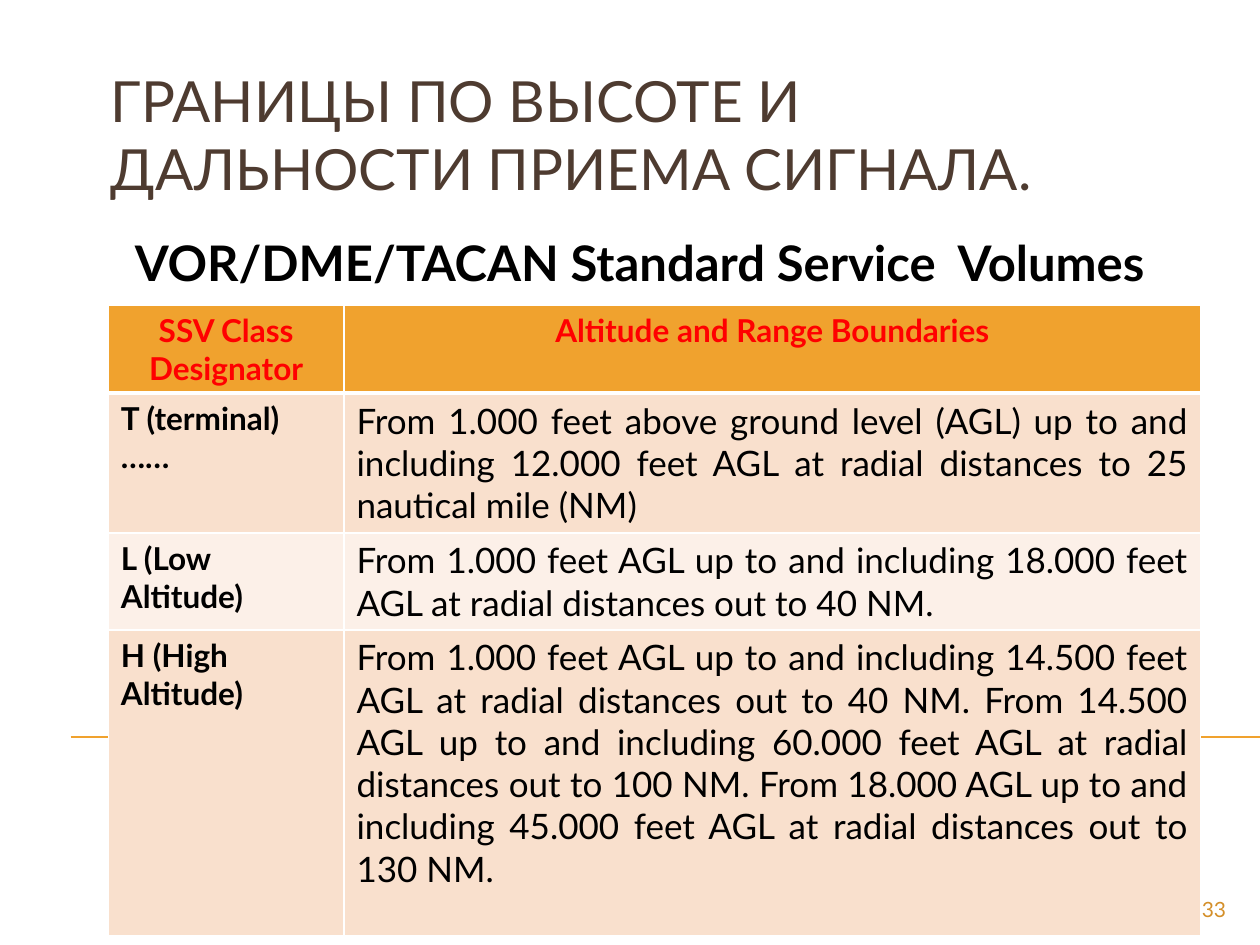
from dataclasses import dataclass

from lxml import etree
from pptx import Presentation
from pptx.dml.color import RGBColor
from pptx.enum.shapes import MSO_CONNECTOR
from pptx.enum.text import MSO_ANCHOR, MSO_AUTO_SIZE, PP_ALIGN
from pptx.oxml.ns import qn
from pptx.util import Inches, Pt

STRAIGHT = MSO_CONNECTOR.STRAIGHT
TOP, MIDDLE = MSO_ANCHOR.TOP, MSO_ANCHOR.MIDDLE
LEFT, CENTER, RIGHT, JUSTIFY = (
    PP_ALIGN.LEFT, PP_ALIGN.CENTER, PP_ALIGN.RIGHT, PP_ALIGN.JUSTIFY)
NO_AUTOFIT = MSO_AUTO_SIZE.NONE


@dataclass(frozen=True)
class Theme:
    font: str = "Lato"
    title: str = "4E3B30"
    text: str = "000000"
    header_text: str = "FF0000"
    number: str = "D48F29"
    accent: str = "F0A22E"
    bands: tuple = ("F9E0CD", "FCF0E8")
    border: str = "FFFFFF"
    title_size: float = 32.4
    heading_size: int = 28
    body_size: int = 20
    label_size: int = 18
    number_size: int = 12


THEME = Theme()
HEADER = ("SSV Class Designator", "Altitude and Range Boundaries")
VOLUMES = (
    ("T (terminal) ……",
     "From 1.000 feet above ground level (AGL) up to and including "
     "12.000 feet AGL at radial distances to 25 nautical mile (NM)"),
    ("L (Low Altitude)",
     "From 1.000 feet AGL up to and including 18.000 feet AGL at radial "
     "distances out to 40 NM."),
    ("H (High Altitude)",
     "From 1.000 feet AGL up to and including 14.500 feet AGL at radial "
     "distances out to 40 NM. From 14.500 AGL up to and including 60.000 "
     "feet AGL at radial distances out to 100 NM. From 18.000 AGL up to and "
     "including 45.000 feet AGL at radial distances out to 130 NM."),
)
COLUMN_WIDTHS = (1.87, 6.8)
ROW_HEIGHTS = (0.69, 1.11, 0.77, 2.43)


def rgb(value):
    return RGBColor.from_string(value)


def write(tf, text, size, color, align=LEFT, bold=False):
    tf.text = text
    p = tf.paragraphs[0]
    p.alignment = align
    font = p.runs[0].font
    font.name, font.size, font.bold = THEME.font, Pt(size), bold
    font.color.rgb = rgb(color)


def add_rule(s, left, right, y):
    line = s.shapes.add_connector(
        STRAIGHT, Inches(left), Inches(y), Inches(right), Inches(y))
    line.line.color.rgb = rgb(THEME.accent)
    line.line.width = Pt(0.75)
    etree.SubElement(line._element.spPr, qn("a:effectLst"))


def place_title(s, box, text):
    title = s.shapes.title
    title.left, title.top, title.width, title.height = map(Inches, box)
    tf = title.text_frame
    tf.word_wrap, tf.auto_size = True, NO_AUTOFIT
    tf.vertical_anchor = TOP
    write(tf, text, THEME.title_size, THEME.title)


def add_text(s, box, text, size, color, align, bold=False, anchor=TOP):
    tf = s.shapes.add_textbox(*map(Inches, box)).text_frame
    tf.word_wrap = True
    tf.vertical_anchor = anchor
    write(tf, text, size, color, align, bold)


def set_borders(cell, top, bottom):
    """Draw all four cell borders; top and bottom are widths in points."""
    tc_pr = cell._tc.get_or_add_tcPr()
    widths = {"a:lnL": 1, "a:lnR": 1, "a:lnT": top, "a:lnB": bottom}
    for i, (tag, width) in enumerate(widths.items()):
        ln = etree.Element(qn(tag), w=str(Pt(width)))
        fill = etree.SubElement(ln, qn("a:solidFill"))
        etree.SubElement(fill, qn("a:srgbClr"), val=THEME.border)
        tc_pr.insert(i, ln)


def add_volume_table(s, left, top):
    rows = (HEADER, *VOLUMES)
    table = s.shapes.add_table(
        len(rows), len(HEADER), Inches(left), Inches(top),
        Inches(sum(COLUMN_WIDTHS)), Inches(sum(ROW_HEIGHTS))).table
    for column, width in zip(table.columns, COLUMN_WIDTHS):
        column.width = Inches(width)
    for r, (row, height) in enumerate(zip(rows, ROW_HEIGHTS)):
        table.rows[r].height = Inches(height)
        for c, text in enumerate(row):
            cell = table.cell(r, c)
            if r == 0:
                fill = THEME.accent
                style = THEME.label_size, THEME.header_text, CENTER, True
            else:
                fill = THEME.bands[(r - 1) % 2]
                style = ((THEME.label_size, THEME.text, LEFT, True) if c == 0
                         else (THEME.body_size, THEME.text, JUSTIFY, False))
            write(cell.text_frame, text, *style)
            cell.fill.solid()
            cell.fill.fore_color.rgb = rgb(fill)
            set_borders(cell, 3 if r == 1 else 1, 3 if r == 0 else 1)


def build_slide(prs):
    s = prs.slides.add_slide(prs.slide_layouts[5])
    add_rule(s, 0.56, 10, 5.85)
    place_title(s, (0.78, 0.47, 8.5, 0.78),
                "ГРАНИЦЫ ПО ВЫСОТЕ И ДАЛЬНОСТИ ПРИЕМА СИГНАЛА.")
    add_text(s, (9, 7.08, 0.83, 0.27), "33", THEME.number_size,
             THEME.number, RIGHT, anchor=MIDDLE)
    add_volume_table(s, 0.86, 2.42)
    add_text(s, (0.62, 1.8, 8.91, 0.57),
             "VOR/DME/TACAN Standard Service  Volumes",
             THEME.heading_size, THEME.text, CENTER, bold=True)


def main():
    prs = Presentation()
    prs.slide_width, prs.slide_height = Inches(10), Inches(7.5)
    build_slide(prs)
    prs.save("out.pptx")


if __name__ == "__main__":
    main()
